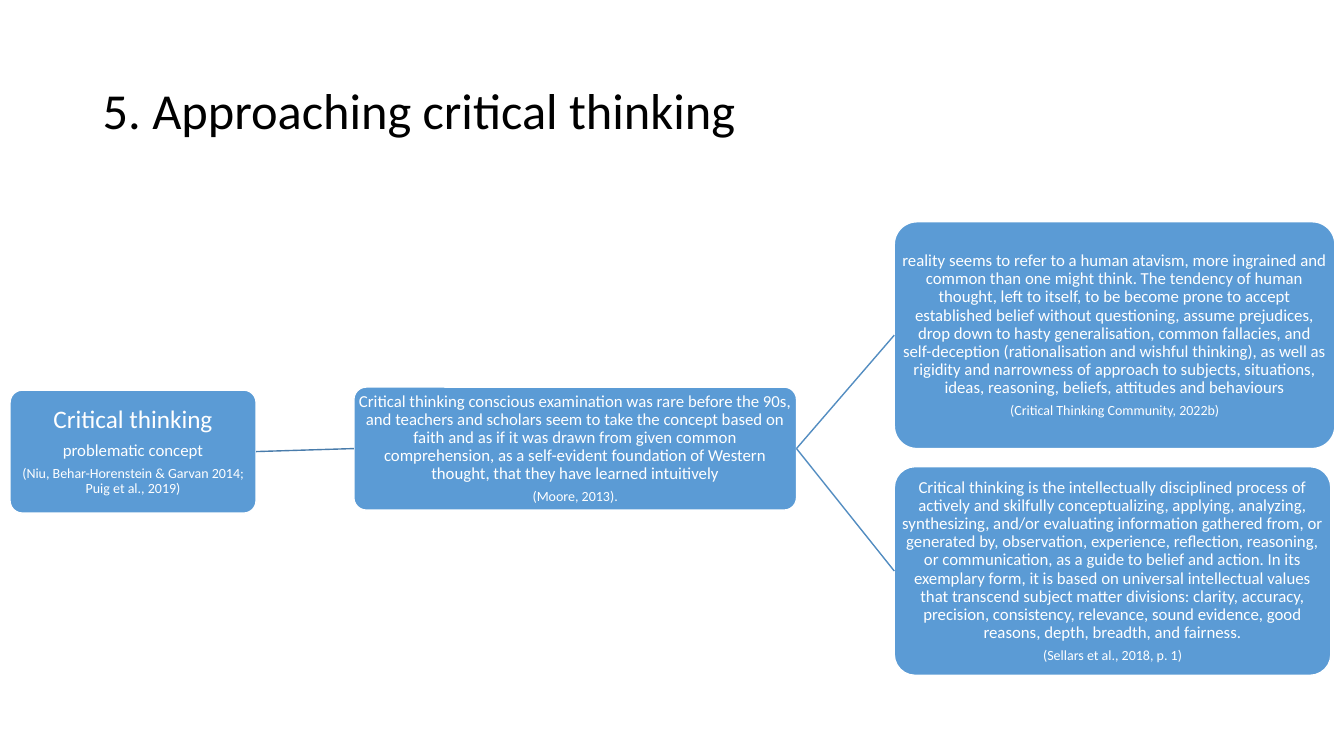
from dataclasses import dataclass

import pptx
import pptx.dml.color
import pptx.enum.shapes
import pptx.enum.text
import pptx.oxml.ns
import pptx.util
from lxml import etree

Inches = pptx.util.Inches
Pt = pptx.util.Pt
Align = pptx.enum.text.PP_ALIGN
LEFT_SITE, RIGHT_SITE = 1, 3


@dataclass(frozen=True)
class Theme:
    font: str = "Calibri"
    paper: str = "FFFFFF"
    ink: str = "000000"
    fill: str = "5B9BD5"
    stem: str = "497CAB"
    branch: str = "538DC1"
    title: int = 36
    head: int = 18
    body: int = 12
    cite: int = 10
    lead: float = 0.9
    gap: float = 0.35


@dataclass(frozen=True)
class Line:
    text: str
    size: int


@dataclass(frozen=True)
class Box:
    left: float
    top: float
    width: float
    height: float
    lines: tuple[Line, ...]


@dataclass(frozen=True)
class Link:
    start: int
    end: int
    color: str


THEME = Theme()

TITLE = Box(0.92, 0.4, 11.5, 1.45, (Line("5. Approaching critical thinking", THEME.title),))

BOXES = (
    Box(0.1, 3.87, 2.44, 1.22, (
        Line("Critical thinking", THEME.head),
        Line("problematic concept", THEME.body),
        Line("(Niu, Behar-Horenstein & Garvan 2014; Puig et al., 2019)", THEME.cite),
    )),
    Box(3.51, 3.84, 4.39, 1.22, (
        Line("Critical thinking conscious examination was rare before the 90s, and teachers "
             "and scholars seem to take the concept based on faith and as if it was drawn "
             "from given common comprehension, as a self-evident foundation of Western "
             "thought, that they have learned intuitively", THEME.body),
        Line("(Moore, 2013).", THEME.cite),
    )),
    Box(8.87, 2.2, 4.37, 2.25, (
        Line("reality seems to refer to a human atavism, more ingrained and common than one "
             "might think. The tendency of human thought, left to itself, to be become prone "
             "to accept established belief without questioning, assume prejudices, drop down "
             "to hasty generalisation, common fallacies, and self-deception (rationalisation "
             "and wishful thinking), as well as rigidity and narrowness of approach to "
             "subjects, situations, ideas, reasoning, beliefs, attitudes and behaviours",
             THEME.body),
        Line("(Critical Thinking Community, 2022b)", THEME.cite),
    )),
    Box(8.87, 4.63, 4.33, 2.07, (
        Line("Critical thinking is the intellectually disciplined process of actively and "
             "skilfully conceptualizing, applying, analyzing, synthesizing, and/or evaluating "
             "information gathered from, or generated by, observation, experience, "
             "reflection, reasoning, or communication, as a guide to belief and action. In "
             "its exemplary form, it is based on universal intellectual values that transcend "
             "subject matter divisions: clarity, accuracy, precision, consistency, relevance, "
             "sound evidence, good reasons, depth, breadth, and fairness.", THEME.body),
        Line("(Sellars et al., 2018, p. 1)", THEME.cite),
    )),
)

LINKS = (Link(0, 1, THEME.stem), Link(1, 2, THEME.branch), Link(1, 3, THEME.branch))


def shade(code: str) -> pptx.dml.color.RGBColor:
    return pptx.dml.color.RGBColor.from_string(code)


def place(box: Box) -> tuple[int, ...]:
    return tuple(Inches(side) for side in (box.left, box.top, box.width, box.height))


def write(frame, lines: tuple[Line, ...], color: str, align: Align, gap: float) -> None:
    frame.word_wrap = True
    frame.vertical_anchor = pptx.enum.text.MSO_ANCHOR.MIDDLE
    for rank, line in enumerate(lines):
        para = frame.add_paragraph() if rank else frame.paragraphs[0]
        para.alignment = align
        para.line_spacing = THEME.lead
        para.space_after = Pt(gap * line.size)
        run = para.add_run()
        run.text = line.text
        run.font.name = THEME.font
        run.font.size = Pt(line.size)
        run.font.color.rgb = shade(color)


def draw_title(slide, box: Box) -> None:
    text = slide.shapes.add_textbox(*place(box))
    write(text.text_frame, box.lines, THEME.ink, Align.LEFT, 0)


def draw_box(slide, box: Box):
    shape = slide.shapes.add_shape(
        pptx.enum.shapes.MSO_SHAPE.ROUNDED_RECTANGLE, *place(box))
    shape.adjustments[0] = 0.1
    shape.shadow.inherit = False
    shape.fill.solid()
    shape.fill.fore_color.rgb = shade(THEME.fill)
    shape.line.color.rgb = shade(THEME.paper)
    shape.line.width = Pt(1)
    frame = shape.text_frame
    frame.margin_left = frame.margin_right = Inches(0.01)
    frame.margin_top = frame.margin_bottom = Inches(0.01)
    write(frame, box.lines, THEME.paper, Align.CENTER, THEME.gap)
    return shape


def draw_link(slide, link: Link, shapes: list) -> None:
    wire = slide.shapes.add_connector(
        pptx.enum.shapes.MSO_CONNECTOR.STRAIGHT, 0, 0, 0, 0)
    wire.begin_connect(shapes[link.start], RIGHT_SITE)
    wire.end_connect(shapes[link.end], LEFT_SITE)
    wire.line.color.rgb = shade(link.color)
    wire.line.width = Pt(1)
    etree.SubElement(wire._element.spPr, pptx.oxml.ns.qn("a:effectLst"))


def main() -> None:
    deck = pptx.Presentation()
    deck.slide_width = Inches(13.33)
    deck.slide_height = Inches(7.5)
    slide = deck.slides.add_slide(deck.slide_layouts[6])
    draw_title(slide, TITLE)
    shapes = [draw_box(slide, box) for box in BOXES]
    for link in LINKS:
        draw_link(slide, link, shapes)
    deck.save("out.pptx")


if __name__ == "__main__":
    main()
